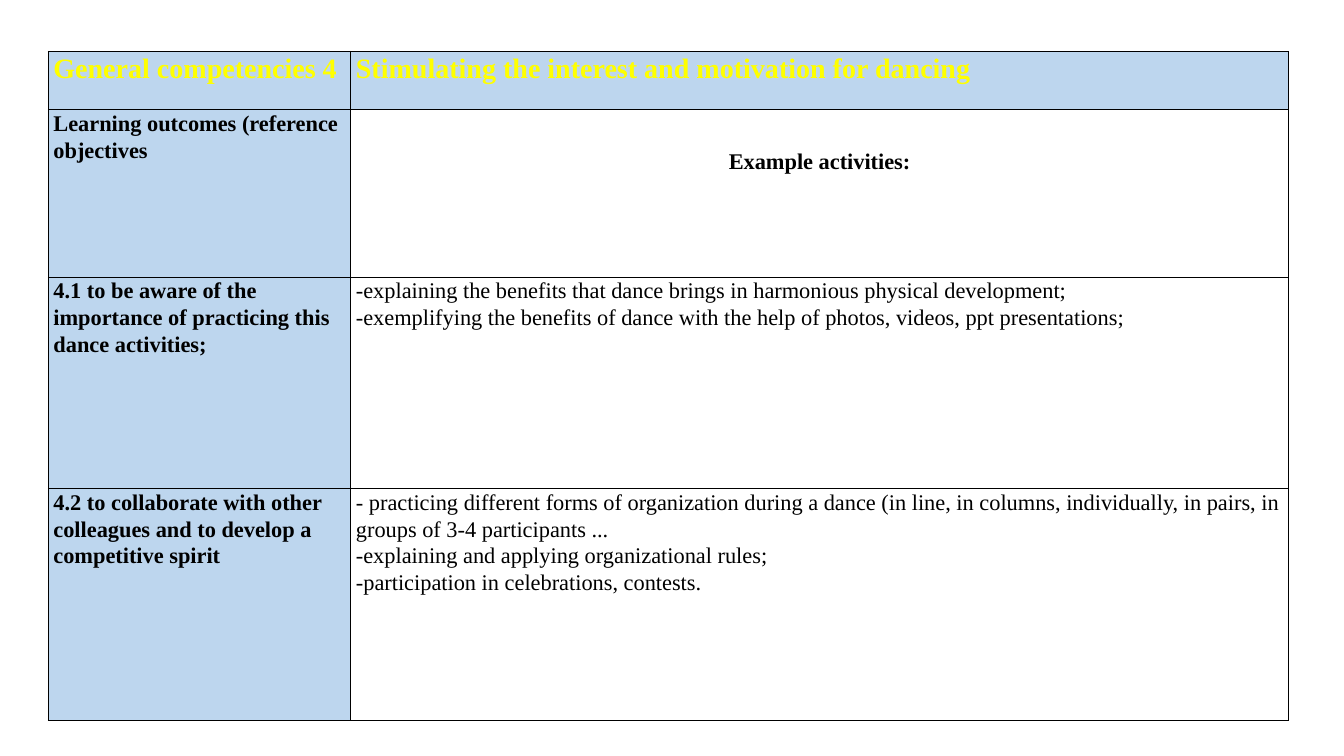
from dataclasses import dataclass

import lxml.etree
import pptx
import pptx.dml.color
import pptx.enum.text
import pptx.oxml.ns
import pptx.util

BLACK = pptx.dml.color.RGBColor(0x00, 0x00, 0x00)
YELLOW = pptx.dml.color.RGBColor(0xFF, 0xFF, 0x00)
PALE_BLUE = pptx.dml.color.RGBColor(0xBD, 0xD6, 0xEE)

FONT = "Times New Roman"
LEFT, TOP = 0.48, 0.51
COLUMNS = (3.0, 9.3)
SIDE_MARGIN = 0.05
ALIGN = pptx.enum.text.PP_ALIGN


@dataclass
class Row:
    height: float
    label: str
    lines: tuple[str, ...]
    size: int = 16
    color: pptx.dml.color.RGBColor = BLACK
    bold: bool = False
    fill: pptx.dml.color.RGBColor | None = None
    align: ALIGN = ALIGN.LEFT
    top_margin: float = 0


ROWS = (
    Row(0.58, "General competencies 4",
        ("Stimulating the interest and motivation for dancing",),
        size=20, color=YELLOW, bold=True, fill=PALE_BLUE),
    Row(1.66, "Learning outcomes (reference objectives", ("Example activities:",),
        bold=True, align=ALIGN.CENTER, top_margin=0.38),
    Row(2.1, "4.1 to be aware of the importance of practicing this dance activities;",
        ("-explaining the benefits that dance brings in harmonious physical development;",
         "-exemplifying the benefits of dance with the help of photos, videos, "
         "ppt presentations;")),
    Row(2.3, "4.2 to collaborate with other colleagues and to develop a competitive spirit",
        ("- practicing different forms of organization during a dance (in line, in columns, "
         "individually, in pairs, in groups of 3-4 participants ...",
         "-explaining and applying organizational rules;",
         "-participation in celebrations, contests.")),
)


def add_borders(cell) -> None:
    """Rule all four sides of a cell in thin black."""
    qn = pptx.oxml.ns.qn
    properties = cell._tc.get_or_add_tcPr()
    for side in ("a:lnL", "a:lnR", "a:lnT", "a:lnB"):
        line = lxml.etree.SubElement(properties, qn(side), w=str(pptx.util.Pt(1)))
        solid = lxml.etree.SubElement(line, qn("a:solidFill"))
        lxml.etree.SubElement(solid, qn("a:srgbClr"), val=str(BLACK))


def write_text(cell, lines: tuple[str, ...], *, size: int, color, bold: bool,
               align: ALIGN = ALIGN.LEFT) -> None:
    """Write one paragraph per line in the given format."""
    frame = cell.text_frame
    for index, text in enumerate(lines):
        para = frame.add_paragraph() if index else frame.paragraphs[0]
        para.alignment = align
        para.line_spacing = 1.07
        span = para.add_run()
        span.text = text
        span.font.name = FONT
        span.font.size = pptx.util.Pt(size)
        span.font.bold = bold
        span.font.color.rgb = color


def style_cell(cell, fill, top_margin: float = 0) -> None:
    """Set the margins, borders and fill of a cell."""
    cell.margin_left = cell.margin_right = pptx.util.Inches(SIDE_MARGIN)
    cell.margin_top = pptx.util.Inches(top_margin)
    cell.margin_bottom = 0
    add_borders(cell)
    if fill is None:
        cell.fill.background()
    else:
        cell.fill.solid()
        cell.fill.fore_color.rgb = fill


def add_competency_table(page) -> None:
    inches = pptx.util.Inches
    height = sum(row.height for row in ROWS)
    table = page.shapes.add_table(len(ROWS), len(COLUMNS), inches(LEFT), inches(TOP),
                                  inches(sum(COLUMNS)), inches(height)).table
    table.horz_banding = False
    table.first_row = False
    for column, width in zip(table.columns, COLUMNS):
        column.width = inches(width)

    for index, row in enumerate(ROWS):
        table.rows[index].height = inches(row.height)
        label, activities = table.cell(index, 0), table.cell(index, 1)
        style_cell(label, PALE_BLUE)
        write_text(label, (row.label,), size=row.size, color=row.color, bold=True)
        style_cell(activities, row.fill, row.top_margin)
        write_text(activities, row.lines, size=row.size, color=row.color,
                   bold=row.bold, align=row.align)


def main() -> None:
    # Deck and blank page
    deck = pptx.Presentation()
    deck.slide_width = pptx.util.Inches(13.33)
    deck.slide_height = pptx.util.Inches(7.5)
    page = deck.slides.add_slide(deck.slide_layouts[6])

    # Competencies and their activities
    add_competency_table(page)
    deck.save("out.pptx")


if __name__ == "__main__":
    main()
